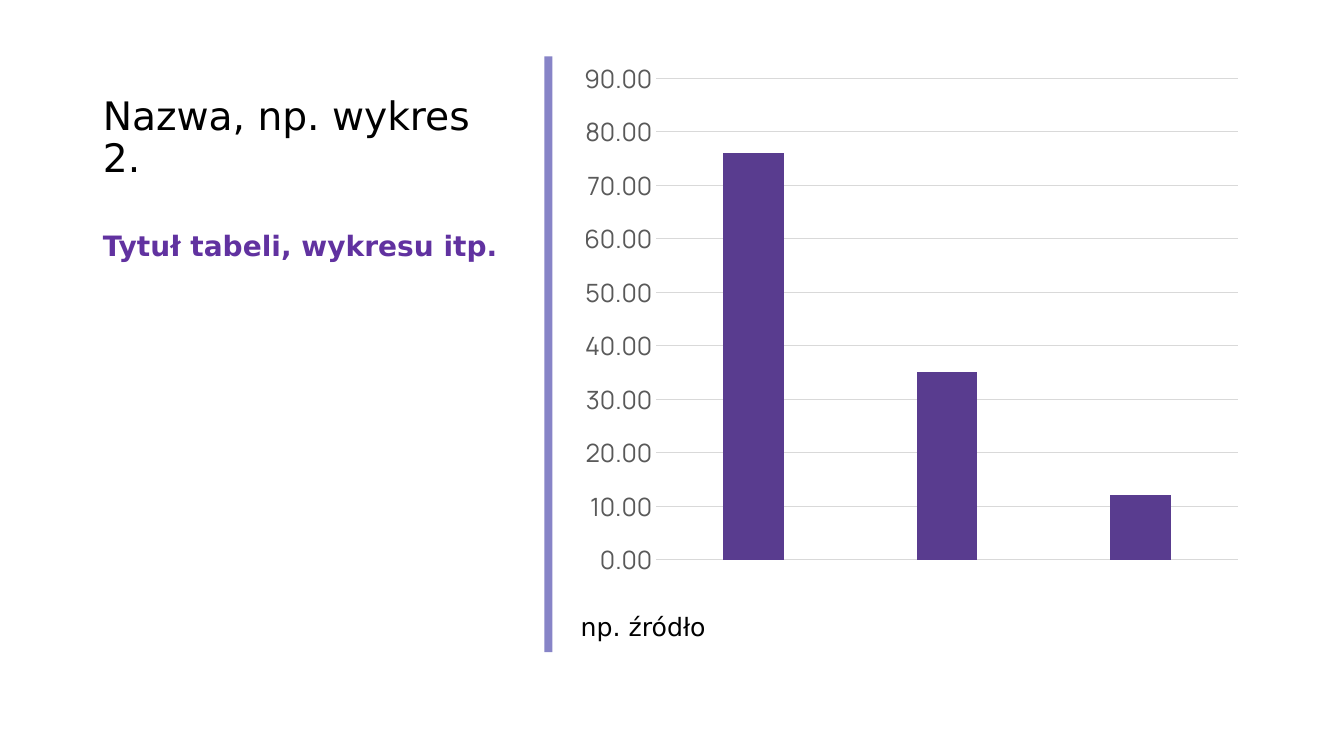
from pptx import Presentation
from pptx.chart.data import CategoryChartData
from pptx.dml.color import RGBColor
from pptx.enum.chart import XL_CHART_TYPE, XL_TICK_MARK
from pptx.enum.shapes import MSO_SHAPE
from pptx.enum.text import MSO_ANCHOR, MSO_AUTO_SIZE, PP_ALIGN
from pptx.util import Inches, Pt

BLACK = RGBColor(0x00, 0x00, 0x00)
VIOLET = RGBColor(0x61, 0x32, 0xA0)
LILAC = RGBColor(0x87, 0x84, 0xC7)
BAR_PURPLE = RGBColor(0x59, 0x3C, 0x8F)
LABEL_GREY = RGBColor(0x59, 0x59, 0x59)
GRID_GREY = RGBColor(0xD9, 0xD9, 0xD9)

# Page grid: a text column on the left, a chart column on the right
LEFT, RIGHT = 0.92, 5.66
TOP, MIDDLE, SOURCE_TOP = 0.5, 2.25, 6.05
TEXT_WIDTH = 4.3

deck = Presentation()
deck.slide_width, deck.slide_height = Inches(13.33), Inches(7.5)
page = deck.slides.add_slide(deck.slide_layouts.get_by_name("Comparison"))


def place(left, top, width, height):
    return [Inches(length) for length in (left, top, width, height)]


# Title, subtitle and source note
texts = {
    0: ("Nazwa, np. wykres 2.", place(LEFT, TOP, TEXT_WIDTH, MIDDLE - TOP),
        MSO_ANCHOR.MIDDLE, {"size": Pt(28), "bold": False}, BLACK),
    1: ("Tytuł tabeli, wykresu itp.", place(LEFT, MIDDLE, TEXT_WIDTH, 4.17),
        MSO_ANCHOR.TOP, {"size": Pt(20), "bold": True}, VIOLET),
    3: ("np. źródło", place(RIGHT, SOURCE_TOP, 6.6, 0.42),
        MSO_ANCHOR.TOP, {"size": Pt(18), "bold": False}, BLACK),
}
for box in list(page.placeholders):
    number = box.placeholder_format.idx
    if number not in texts:
        box.element.getparent().remove(box.element)
        continue
    wording, (box.left, box.top, box.width, box.height), anchor, formats, color = texts[number]
    frame = box.text_frame
    frame.text = wording
    frame.word_wrap = True
    frame.auto_size = MSO_AUTO_SIZE.NONE
    frame.vertical_anchor = anchor
    para = frame.paragraphs[0]
    para.alignment = PP_ALIGN.LEFT
    para.line_spacing = 0.9
    para.space_before = Pt(0)
    span = para.runs[0]
    span.font.name = "DejaVu Sans"
    span.font.color.rgb = color
    for name, value in formats.items():
        setattr(span.font, name, value)

# Vertical divider between the columns
divider = page.shapes.add_shape(MSO_SHAPE.RECTANGLE, *place(5.4, 0.56, 0.08, 5.91))
divider.shadow.inherit = False
divider.fill.solid()
divider.fill.fore_color.rgb = LILAC
divider.line.fill.background()

# Column chart
chart_data = CategoryChartData(number_format="0.00")
chart_data.categories = ["1", "2", "3"]
chart_data.add_series("Series 1", [76, 35, 12])
chart = page.shapes.add_chart(
    XL_CHART_TYPE.COLUMN_CLUSTERED, *place(RIGHT, TOP, 6.75, 5.33), chart_data
).chart
chart.has_legend = False
chart.has_title = False

plot = chart.plots[0]
plot.gap_width, plot.overlap = 219, -27
plot.vary_by_categories = False
columns = plot.series[0].format.fill
columns.solid()
columns.fore_color.rgb = BAR_PURPLE

# Axes and grid
chart.category_axis.visible = False
axis = chart.value_axis
axis.minimum_scale, axis.maximum_scale, axis.major_unit = 0, 90, 10
axis.major_tick_mark = axis.minor_tick_mark = XL_TICK_MARK.NONE
axis.format.line.fill.background()
axis.tick_labels.number_format = "0.00"
axis.tick_labels.number_format_is_linked = False
grid_line = axis.major_gridlines.format.line
grid_line.color.rgb = GRID_GREY
grid_line.width = Pt(0.75)
for font, color in ((chart.font, BLACK), (axis.tick_labels.font, LABEL_GREY)):
    font.name = "Manrope"
    font.size = Pt(18)
    font.color.rgb = color

deck.save("out.pptx")
